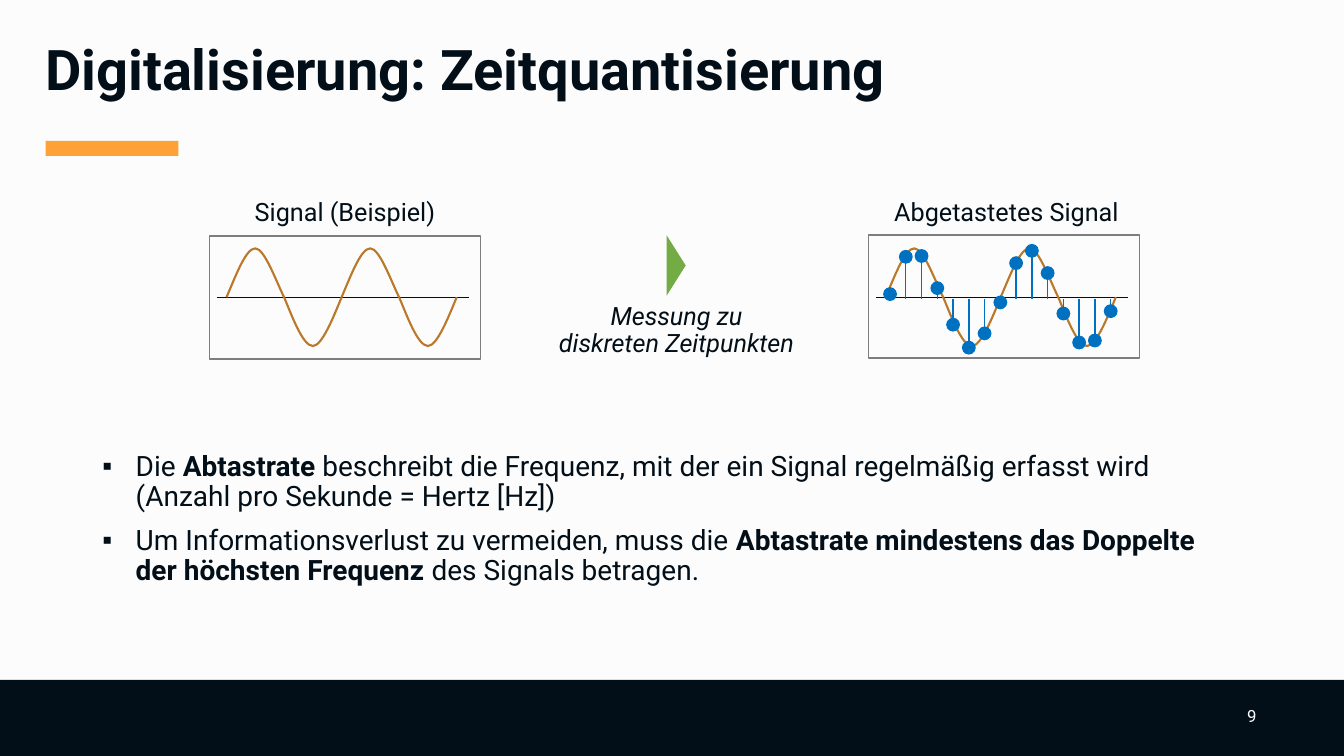
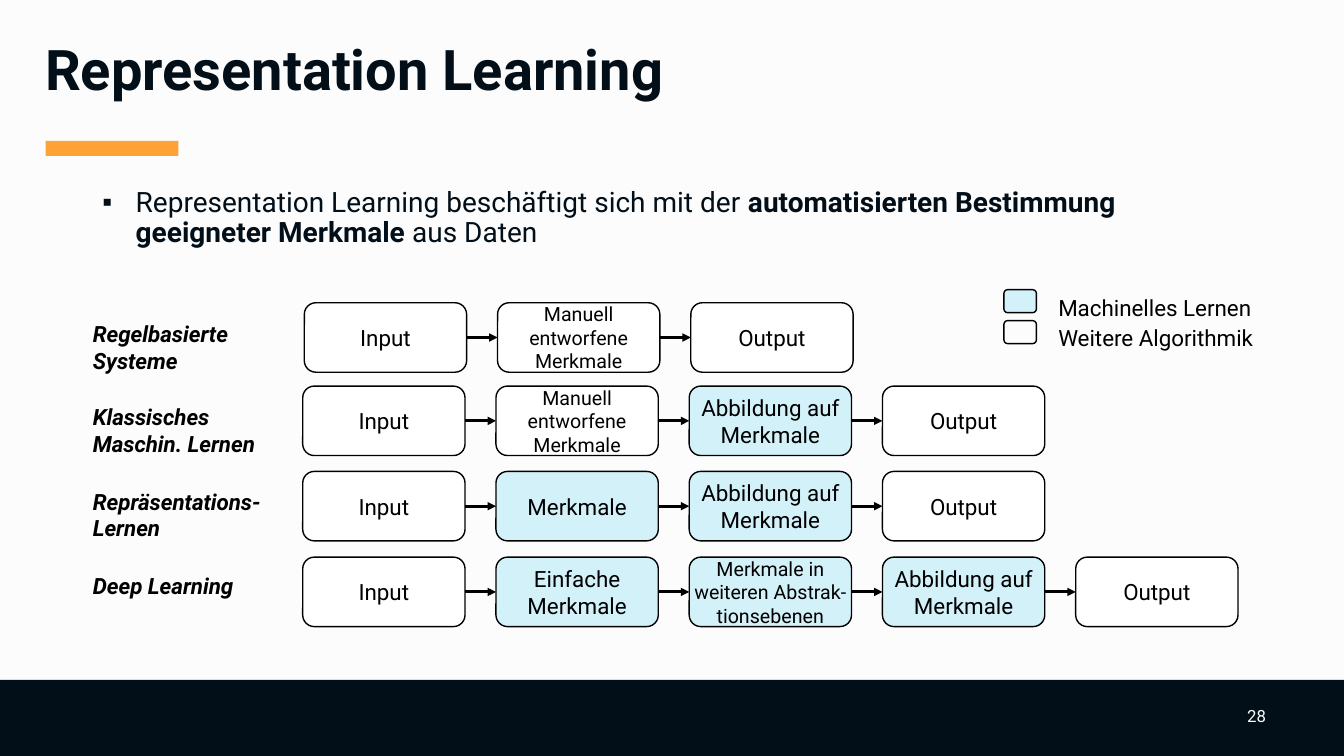
"""Build two lecture slides on sampling and representation learning."""

from dataclasses import dataclass

from lxml.etree import SubElement
from pptx import Presentation
from pptx.dml.color import RGBColor
from pptx.enum.shapes import MSO_CONNECTOR as Connector, MSO_SHAPE as Shape
from pptx.enum.text import MSO_ANCHOR as Anchor, MSO_AUTO_SIZE as AutoSize, PP_ALIGN as Align
from pptx.oxml.ns import qn
from pptx.util import Cm, Pt

rgb = RGBColor.from_string


@dataclass(frozen=True)
class Theme:
    """Colours, font and type sizes of the deck."""

    font: str = "Roboto"
    paper: RGBColor = rgb("FCFCFC")
    ink: RGBColor = rgb("020F18")
    accent: RGBColor = rgb("FEA238")
    frame: RGBColor = rgb("7E7E7E")
    curve: RGBColor = rgb("BC7829")
    sample: RGBColor = rgb("0070C0")
    arrow: RGBColor = rgb("73AC44")
    black: RGBColor = rgb("000000")
    white: RGBColor = rgb("FFFFFF")
    learned: RGBColor = rgb("D3F1F9")
    title_size: int = 40
    body_size: int = 20
    caption_size: int = 18
    label_size: int = 16
    small_size: int = 14
    number_size: int = 12


THEME = Theme()
INSETS = (0.25, 0.13, 0.25, 0.13)

WAVE = ((0, 0), (0.09, 0.5), (0.17, 1), (0.25, 1), (0.33, 1), (0.43, 0.33), (0.5, 0),
        (0.56, -0.33), (0.66, -1), (0.75, -1), (0.83, -1), (0.93, -0.4), (1, 0))
SAMPLE_HEIGHTS = (0.13, 1.07, 1.09, 0.28, -0.64, -1.22, -0.86, -0.08,
                  0.91, 1.22, 0.66, -0.36, -1.09, -1.04, -0.3)

INPUT = ("Input", False)
OUTPUT = ("Output", False)
MANUAL = ("Manuell entworfene Merkmale", False)
MAPPING = ("Abbildung auf Merkmale", True)
PIPELINES = (
    (7.67, 7.63, 7.95, "Regelbasierte Systeme", (INPUT, MANUAL, OUTPUT)),
    (7.63, 9.73, 10.03, "Klassisches Maschin. Lernen", (INPUT, MANUAL, MAPPING, OUTPUT)),
    (7.63, 11.88, 12.16, "Repräsentations- Lernen",
     (INPUT, ("Merkmale", True), MAPPING, OUTPUT)),
    (7.63, 14.04, 14.28, "Deep Learning",
     (INPUT, ("Einfache Merkmale", True), ("Merkmale in weiteren Abstrak-tionsebenen", True),
      MAPPING, OUTPUT)),
)


def write_text(para, text, *, size, color=THEME.ink, bold=False, italic=False,
               align=Align.LEFT, spacing=1.0, before=0):
    """Write text into a paragraph; parts between asterisks are bold."""
    para.alignment = align
    para.line_spacing = spacing
    para.space_before = Pt(before)
    for line_index, line in enumerate(text.split("\n")):
        if line_index:
            para.add_line_break()
        for part_index, part in enumerate(line.split("*")):
            if part:
                span = para.add_run()
                span.text = part
                font = span.font
                font.name, font.size, font.color.rgb = THEME.font, Pt(size), color
                font.bold = bold or part_index % 2 == 1
                font.italic = italic


def set_frame(frame, anchor, margins=INSETS):
    """Set wrapping, anchor and the left, top, right and bottom margins."""
    frame.word_wrap = True
    frame.auto_size = AutoSize.NONE
    frame.vertical_anchor = anchor
    frame.margin_left, frame.margin_top, frame.margin_right, frame.margin_bottom = map(Cm, margins)


def place(item, left, top, width, height):
    """Move and size an item, in centimetres."""
    item.left, item.top, item.width, item.height = map(Cm, (left, top, width, height))


def add_text(parent, area, text, *, anchor=Anchor.TOP, margins=INSETS, **style):
    """Add a text box."""
    box = parent.shapes.add_textbox(*map(Cm, area))
    set_frame(box.text_frame, anchor, margins)
    write_text(box.text_frame.paragraphs[0], text, **style)


def add_caption(parent, area, text, **style):
    """Add a centred caption."""
    add_text(parent, area, text, anchor=Anchor.MIDDLE, margins=(0.1,) * 4,
             size=THEME.caption_size, align=Align.CENTER, spacing=0.9, **style)


def set_outline(item, color, width):
    """Set the line of a shape or connector."""
    item.line.color.rgb = color
    item.line.width = Pt(width)


def add_box(parent, kind, area, *, fill=None, line=None):
    """Add a preset shape with an optional fill and outline."""
    box = parent.shapes.add_shape(kind, *map(Cm, area))
    box.shadow.inherit = False
    if fill is None:
        box.fill.background()
    else:
        box.fill.solid()
        box.fill.fore_color.rgb = fill
    if line is None:
        box.line.fill.background()
    else:
        set_outline(box, line, 1)
    return box


def add_line(parent, start, end, *, color, width=1, tail=None, tail_size="med"):
    """Add a straight connector with an optional end mark."""
    line = parent.shapes.add_connector(Connector.STRAIGHT, *map(Cm, (*start, *end)))
    set_outline(line, color, width)
    properties = line.element.spPr
    if tail:
        SubElement(properties.find(qn("a:ln")), qn("a:tailEnd"),
                   type=tail, w=tail_size, len=tail_size)
    SubElement(properties, qn("a:effectLst"))
    return line


def add_wave(parent, left, middle, *, width=2.9, height=1.23):
    """Draw one period of a wave as four Bézier segments."""
    points = [(Cm(left + width * x), Cm(middle - height * y)) for x, y in WAVE]
    builder = parent.shapes.build_freeform(*points[0])
    builder.add_line_segments(points[1:], close=False)
    wave = builder.convert_to_shape()
    outline = next(wave.element.iter(qn("a:path")))
    steps = outline.findall(qn("a:lnTo"))
    for index, step in enumerate(steps):
        if index % 3 == 0:
            bezier = SubElement(outline, qn("a:cubicBezTo"))
        bezier.append(step[0])
        outline.remove(step)
    wave.shadow.inherit = False
    wave.fill.background()
    set_outline(wave, THEME.curve, 1.5)


def fill_bullets(slide, area, texts):
    """Fill the body placeholder with a bulleted list."""
    body = slide.placeholders[1]
    place(body, *area)
    frame = body.text_frame
    set_frame(frame, Anchor.TOP)
    for index, text in enumerate(texts):
        para = frame.add_paragraph() if index else frame.paragraphs[0]
        properties = para._p.get_or_add_pPr()
        properties.set("marL", str(Cm(0.84)))
        properties.set("indent", str(-Cm(0.84)))
        SubElement(properties, qn("a:buChar"), char="▪")
        write_text(para, text, size=THEME.body_size, spacing=0.9, before=10 if index else 0)


def style_layout(deck, layout, slide):
    """Give the layout its background, title place, band and accent bar."""
    background = deck.slide_master.background.fill
    background.solid()
    background.fore_color.rgb = THEME.paper
    title, _, *footers = layout.placeholders
    place(title, 0.89, 0.48, 29.21, 2.49)
    tree = layout.shapes.element
    for footer in footers:
        tree.remove(footer.element)
    bars = (((0, 17.13, 33.87, 1.92), THEME.ink), ((1.15, 3.55, 3.35, 0.38), THEME.accent))
    for index, (area, color) in enumerate(bars):
        bar = add_box(slide, Shape.RECTANGLE, area, fill=color)
        bar.element.nvSpPr.cNvPr.set("id", str(100 + index))
        tree.insert(2 + index, bar.element)


def add_slide(deck, title, number):
    """Add a slide with its title and number."""
    layout = deck.slide_layouts[1]
    slide = deck.slides.add_slide(layout)
    if len(deck.slides) == 1:
        style_layout(deck, layout, slide)
    frame = slide.shapes.title.text_frame
    set_frame(frame, Anchor.MIDDLE)
    write_text(frame.paragraphs[0], title, size=THEME.title_size, bold=True)
    add_text(slide, (31.18, 17.54, 1.52, 1.02), number, anchor=Anchor.MIDDLE,
             size=THEME.number_size, color=THEME.paper)
    return slide


def add_signal(parent, left, top, caption, caption_left, heights=()):
    """Draw a framed signal with its caption and optional samples."""
    axis = 7.49
    add_line(parent, (left + 0.18, axis), (left + 6.54, axis), color=THEME.ink)
    add_box(parent, Shape.RECTANGLE, (left, top, 6.83, 3.1), line=THEME.frame)
    for period in range(2):
        add_wave(parent, left + 0.43 + 2.9 * period, axis)
    for index, height in enumerate(heights):
        x = left + 0.54 + 5.56 * index / (len(heights) - 1)
        foot = axis + 0.05
        add_line(parent, (x, foot), (x, foot - height), color=THEME.sample,
                 tail="oval", tail_size="lg")
    add_caption(parent, (caption_left, 4.63, 7.49, 1.47), caption)


def add_pipeline(slide, left, top, label_top, label, stages):
    """Draw a labelled row of stages joined by arrows."""
    row = slide.shapes.add_group_shape()
    label_size = (5.33, 1.57) if len(label) > 15 else (4.24, 0.91)
    add_text(row, (2.34, label_top, *label_size), label, margins=(0, 0.13, 0.25, 0.13),
             size=THEME.label_size, color=THEME.black, bold=True, italic=True)
    width, height, pitch = 4.09, 1.75, 4.87
    middle = top + height / 2
    previous = None
    for index, (text, learned) in enumerate(stages):
        x = left + pitch * index
        box = add_box(row, Shape.ROUNDED_RECTANGLE, (x, top, width, height),
                      fill=THEME.learned if learned else THEME.white, line=THEME.black)
        set_frame(box.text_frame, Anchor.MIDDLE, (0,) * 4)
        write_text(box.text_frame.paragraphs[0], text, color=THEME.black, align=Align.CENTER,
                   size=THEME.small_size if len(text) > 25 else THEME.label_size)
        if previous is not None:
            arrow = add_line(row, (x - pitch + width, middle), (x, middle),
                             color=THEME.black, width=2, tail="triangle")
            arrow.begin_connect(previous, 3)
            arrow.end_connect(box, 1)
        previous = box


def add_legend(slide):
    """Explain the two stage colours."""
    legend = slide.shapes.add_group_shape()
    entries = (("Machinelles Lernen", THEME.learned), ("Weitere Algorithmik", THEME.paper))
    for index, (text, color) in enumerate(entries):
        top = 7.3 + 0.78 * index
        add_box(legend, Shape.ROUNDED_RECTANGLE, (25.3, top, 0.82, 0.58),
                fill=color, line=THEME.black)
        add_text(legend, (26.42, top - 0.03, 6.81, 0.91), text,
                 size=THEME.label_size, color=THEME.black)


def build_sampling(deck):
    """Build the slide on sampling in time."""
    slide = add_slide(deck, "Digitalisierung: Zeitquantisierung", "9")
    signal = slide.shapes.add_group_shape()
    add_signal(signal, 5.28, 5.95, "Signal (Beispiel)", 4.95)
    sampling = slide.shapes.add_group_shape()
    arrow = add_box(sampling, Shape.ISOSCELES_TRIANGLE, (16.28, 6.45, 1.52, 0.48),
                    fill=THEME.arrow)
    arrow.rotation = 90
    add_signal(sampling, 21.89, 5.92, "Abgetastetes Signal", 21.62, SAMPLE_HEIGHTS)
    add_caption(sampling, (13.48, 7.6, 7.14, 1.47), "Messung zu\ndiskreten Zeitpunkten",
                italic=True)
    fill_bullets(slide, (2.33, 11.26, 29.21, 5.59), (
        "Die *Abtastrate *beschreibt die Frequenz, mit der ein Signal regelmäßig erfasst wird "
        "(Anzahl pro Sekunde = Hertz [Hz])",
        "Um Informationsverlust zu vermeiden, muss die *Abtastrate mindestens das Doppelte "
        "der höchsten Frequenz *des Signals betragen.",
    ))


def build_learning(deck):
    """Build the slide on representation learning."""
    slide = add_slide(deck, "Representation Learning", "28")
    fill_bullets(slide, (2.33, 4.62, 26.54, 2.69), (
        "Representation Learning beschäftigt sich mit der *automatisierten Bestimmung "
        "geeigneter Merkmale *aus Daten",
    ))
    for pipeline in PIPELINES:
        add_pipeline(slide, *pipeline)
    add_legend(slide)


def main():
    """Create and save the deck."""
    deck = Presentation()
    deck.slide_width, deck.slide_height = Cm(33.87), Cm(19.05)
    build_sampling(deck)
    build_learning(deck)
    deck.save("out.pptx")


if __name__ == "__main__":
    main()
